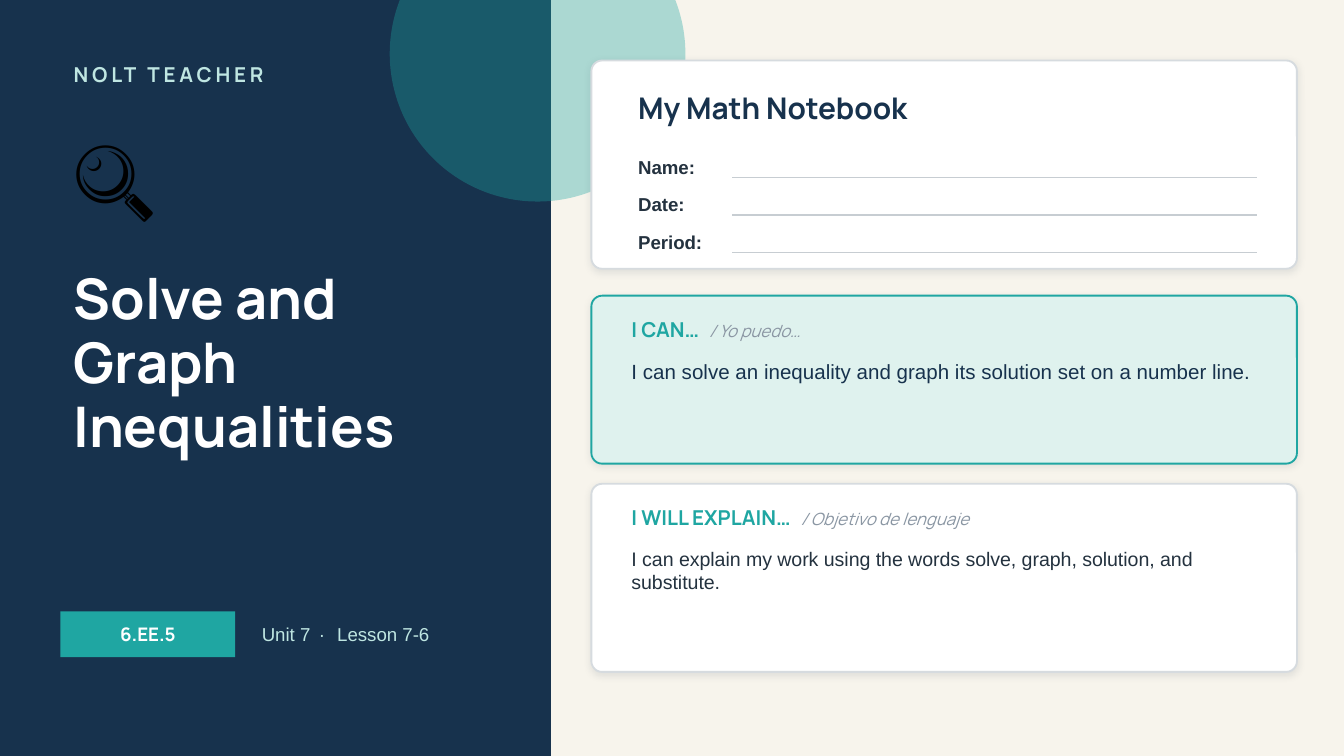
from dataclasses import dataclass

from lxml.etree import SubElement
from pptx import Presentation
from pptx.dml.color import RGBColor
from pptx.enum.shapes import MSO_CONNECTOR, MSO_SHAPE
from pptx.enum.text import MSO_ANCHOR, PP_ALIGN
from pptx.oxml.ns import qn
from pptx.shapes.autoshape import Shape
from pptx.slide import Slide
from pptx.text.text import TextFrame
from pptx.util import Inches, Pt

COLORS = {
    "cream": "F7F4EC",
    "navy": "17324D",
    "teal": "1FA6A2",
    "mint": "BFE6E2",
    "pale_mint": "DFF2EE",
    "white": "FFFFFF",
    "black": "000000",
    "ink": "24323F",
    "muted": "8A96A3",
    "border": "D6DBDF",
    "rule": "C7CDD2",
    "shadow": "1C2E42",
}
CARD_LEFT, CARD_WIDTH, CORNER = 4.4, 5.25, 0.08


@dataclass(frozen=True)
class Box:
    left: float
    top: float
    width: float
    height: float

    def emu(self) -> list[int]:
        return [Inches(side) for side in (self.left, self.top, self.width, self.height)]


@dataclass(frozen=True)
class Words:
    text: str
    size: float
    color: str
    font: str = "Arial"
    bold: bool = False
    italic: bool = False
    tracking: float = 0


@dataclass(frozen=True)
class Goal:
    top: float
    height: float
    fill: str
    border: str
    heading: str
    translation: str
    statement: Words


def rgb(name: str) -> RGBColor:
    return RGBColor.from_string(COLORS[name])


def write(frame: TextFrame, pieces: list[Words]) -> None:
    for words in pieces:
        run = frame.paragraphs[0].add_run()
        run.text = words.text
        run.font.size = Pt(words.size)
        run.font.name = words.font
        run.font.bold = words.bold
        run.font.italic = words.italic
        run.font.color.rgb = rgb(words.color)
        if words.tracking:
            run._r.get_or_add_rPr().set("spc", str(round(words.tracking * 100)))


def add_text(slide: Slide, box: Box, *pieces: Words,
             anchor: MSO_ANCHOR = MSO_ANCHOR.MIDDLE) -> TextFrame:
    frame = slide.shapes.add_textbox(*box.emu()).text_frame
    frame.word_wrap = True
    frame.vertical_anchor = anchor
    write(frame, list(pieces))
    return frame


def add_block(slide: Slide, kind: MSO_SHAPE, box: Box, fill: str) -> Shape:
    block = slide.shapes.add_shape(kind, *box.emu())
    block.shadow.inherit = False
    block.fill.solid()
    block.fill.fore_color.rgb = rgb(fill)
    block.line.fill.background()
    return block


def add_alpha(color_element, percent: int) -> None:
    SubElement(color_element, qn("a:alpha"), val=str(percent * 1000))


def add_card(slide: Slide, top: float, height: float, fill: str, border: str) -> None:
    card = add_block(slide, MSO_SHAPE.ROUNDED_RECTANGLE,
                     Box(CARD_LEFT, top, CARD_WIDTH, height), fill)
    card.adjustments[0] = CORNER / height
    card.line.color.rgb = rgb(border)
    card.line.width = Pt(1)
    effects = card._element.spPr.find(qn("a:effectLst"))
    shadow = SubElement(effects, qn("a:outerShdw"), blurRad=str(Pt(4)),
                        dist=str(Pt(1)), dir="5400000", rotWithShape="0")
    add_alpha(SubElement(shadow, qn("a:srgbClr"), val=COLORS["shadow"]), 10)


def add_field(slide: Slide, label: str, top: float) -> None:
    add_text(slide, Box(4.65, top, 0.8, 0.24), Words(label, 10, "ink", bold=True))
    rule_y = Inches(top + 0.2)
    rule = slide.shapes.add_connector(
        MSO_CONNECTOR.STRAIGHT, Inches(5.45), rule_y, Inches(9.35), rule_y)
    rule.line.color.rgb = rgb("rule")
    rule.line.width = Pt(0.75)
    SubElement(rule._element.spPr, qn("a:effectLst"))


def add_goal(slide: Slide, goal: Goal) -> None:
    add_card(slide, goal.top, goal.height, goal.fill, goal.border)
    add_text(
        slide, Box(4.6, goal.top + 0.1, 4.85, 0.3),
        Words(goal.heading, 11, "teal", "Manrope", bold=True),
        Words(" ", 11, "teal", "Manrope", bold=True, tracking=3),
        Words(goal.translation, 9, "muted", "Manrope", italic=True),
    )
    add_text(slide, Box(4.6, goal.top + 0.42, 4.85, goal.height - 0.47),
             goal.statement, anchor=MSO_ANCHOR.TOP)


def add_cover(slide: Slide, slide_height: float) -> None:
    add_block(slide, MSO_SHAPE.RECTANGLE, Box(0, 0, 4.1, slide_height), "navy")
    circle = add_block(slide, MSO_SHAPE.OVAL, Box(2.9, -0.7, 2.2, 2.2), "teal")
    add_alpha(circle._element.spPr.find(qn("a:solidFill"))[0], 35)
    add_text(slide, Box(0.45, 0.4, 3.3, 0.3),
             Words("NOLT TEACHER", 11, "mint", "Manrope", bold=True, tracking=2))
    add_text(slide, Box(0.45, 0.85, 1.5, 0.9), Words("🔍", 44, "black", "Calibri"))
    title = add_text(slide, Box(0.45, 1.95, 3.3, 1.7),
                     Words("Solve and Graph Inequalities", 30, "white", "Manrope", bold=True),
                     anchor=MSO_ANCHOR.TOP)
    title.paragraphs[0].line_spacing = 0.95

    standard = add_block(slide, MSO_SHAPE.RECTANGLE, Box(0.45, 4.55, 1.3, 0.34), "teal")
    standard.text_frame.vertical_anchor = MSO_ANCHOR.MIDDLE
    standard.text_frame.paragraphs[0].alignment = PP_ALIGN.CENTER
    write(standard.text_frame, [Words("6.EE.5", 10, "white", "Manrope", bold=True)])
    add_text(slide, Box(1.85, 4.55, 2.1, 0.34),
             Words("Unit 7", 10, "mint"),
             Words(" · ", 10, "mint", tracking=1.85),
             Words("Lesson 7-6", 10, "mint"))


def add_notebook(slide: Slide) -> None:
    add_card(slide, 0.45, 1.55, "white", "border")
    add_text(slide, Box(4.65, 0.6, 4.8, 0.4),
             Words("My Math Notebook", 16, "navy", "Manrope", bold=True))
    for row, label in enumerate(("Name:", "Date:", "Period:")):
        add_field(slide, label, 1.12 + 0.28 * row)


GOALS = (
    Goal(2.2, 1.25, "pale_mint", "teal", "I CAN…", "/ Yo puedo…",
         Words("I can solve an inequality and graph its solution set on a number line.",
               11, "navy")),
    Goal(3.6, 1.4, "white", "border", "I WILL EXPLAIN…", "/ Objetivo de lenguaje",
         Words("I can explain my work using the words solve, graph, solution, and substitute.",
               10.5, "ink")),
)


def main() -> None:
    deck = Presentation()
    deck.slide_width = Inches(10)
    deck.slide_height = Inches(10 * 9 / 16)
    slide = deck.slides.add_slide(deck.slide_layouts[6])
    slide.background.fill.solid()
    slide.background.fill.fore_color.rgb = rgb("cream")
    add_cover(slide, deck.slide_height.inches)
    add_notebook(slide)
    for goal in GOALS:
        add_goal(slide, goal)
    deck.save("out.pptx")


if __name__ == "__main__":
    main()
